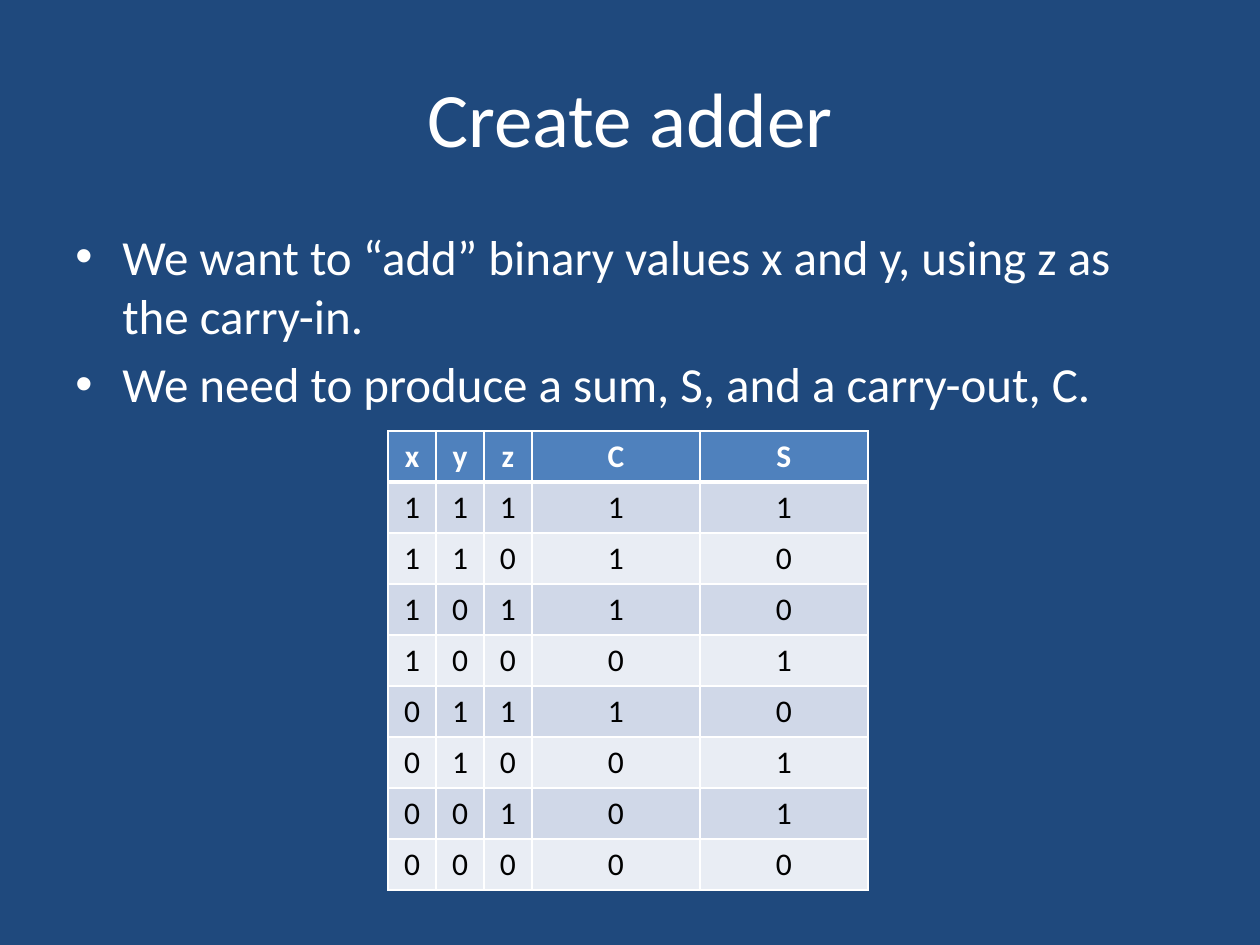
from itertools import product

from lxml.etree import SubElement
from pptx import Presentation
from pptx.dml.color import RGBColor
from pptx.enum.text import MSO_ANCHOR, PP_ALIGN
from pptx.oxml.ns import qn
from pptx.util import Emu, Pt

PX_PER_INCH = 126
COLORS = {
    "background": "1F497D",
    "light": "FFFFFF",
    "dark": "000000",
    "header": "4F81BD",
    "odd_row": "D0D8E8",
    "even_row": "E9EDF4",
}
TITLE = {"size": Pt(44), "name": "Calibri"}
BODY = {"size": Pt(28), "name": "Calibri"}
HEADER_CELL = {"size": Pt(18), "name": "Calibri", "bold": True}
VALUE_CELL = {"size": Pt(18), "name": "Calibri", "bold": False}

BULLETS = [
    "We want to “add” binary values x and y, using z as the carry-in.",
    "We need to produce a sum, S, and a carry-out, C.",
]
COLUMN_WIDTHS = {"x": 48, "y": 48, "z": 48, "C": 168, "S": 168}
ROW_HEIGHT = 51
BULLET_INDENT = 47


def px(length):
    return Emu(round(length * 914400 / PX_PER_INCH))


def color(name):
    return RGBColor.from_string(COLORS[name])


def write(paragraph, text, font_format, color_name, alignment):
    paragraph.alignment = alignment
    run = paragraph.add_run()
    run.text = text
    for attribute, value in font_format.items():
        setattr(run.font, attribute, value)
    run.font.color.rgb = color(color_name)


def add_text_frame(slide, left, top, width, height, anchor):
    text_box = slide.shapes.add_textbox(px(left), px(top), px(width), px(height))
    text_frame = text_box.text_frame
    text_frame.word_wrap = True
    text_frame.vertical_anchor = anchor
    return text_frame


def add_title(slide, text):
    text_frame = add_text_frame(slide, 63, 38, 1134, 157, MSO_ANCHOR.MIDDLE)
    write(text_frame.paragraphs[0], text, TITLE, "light", PP_ALIGN.CENTER)


def set_bullet(paragraph):
    properties = paragraph._p.get_or_add_pPr()
    properties.set("marL", str(px(BULLET_INDENT)))
    properties.set("indent", str(-px(BULLET_INDENT)))
    SubElement(properties, qn("a:buFont"), typeface="Arial")
    SubElement(properties, qn("a:buChar"), char="•")


def add_bullets(slide, texts):
    text_frame = add_text_frame(slide, 63, 220, 1134, 624, MSO_ANCHOR.TOP)
    for index, text in enumerate(texts):
        paragraph = text_frame.add_paragraph() if index else text_frame.paragraphs[0]
        paragraph.space_before = Pt(5.6)
        set_bullet(paragraph)
        write(paragraph, text, BODY, "light", PP_ALIGN.LEFT)


def set_borders(cell, widths):
    properties = cell._tc.get_or_add_tcPr()
    for side, width in widths.items():
        line = SubElement(properties, qn(f"a:ln{side}"), w=str(Pt(width)))
        fill = SubElement(line, qn("a:solidFill"))
        SubElement(fill, qn("a:srgbClr"), val=COLORS["light"])


def format_cell(cell, text, row_index):
    is_header = row_index == 0
    top = 3 if row_index == 1 else 1
    bottom = 3 if is_header else 1
    set_borders(cell, {"L": 1, "R": 1, "T": top, "B": bottom})
    fill_name = "header" if is_header else "odd_row" if row_index % 2 else "even_row"
    cell.fill.solid()
    cell.fill.fore_color.rgb = color(fill_name)
    font_format = HEADER_CELL if is_header else VALUE_CELL
    text_color = "light" if is_header else "dark"
    write(cell.text_frame.paragraphs[0], text, font_format, text_color, PP_ALIGN.CENTER)


def adder_rows():
    rows = [list(COLUMN_WIDTHS)]
    for inputs in product((1, 0), repeat=3):
        rows.append([*inputs, *divmod(sum(inputs), 2)])
    return rows


def add_truth_table(slide, rows):
    widths = list(COLUMN_WIDTHS.values())
    frame = slide.shapes.add_table(
        len(rows), len(widths), px(388), px(431), px(sum(widths)), px(ROW_HEIGHT * len(rows))
    )
    table = frame.table
    for column, width in zip(table.columns, widths):
        column.width = px(width)
    for row_index, values in enumerate(rows):
        table.rows[row_index].height = px(ROW_HEIGHT)
        for column_index, value in enumerate(values):
            format_cell(table.cell(row_index, column_index), str(value), row_index)


def main():
    presentation = Presentation()
    presentation.slide_width = px(1260)
    presentation.slide_height = px(945)
    slide = presentation.slides.add_slide(presentation.slide_layouts[6])
    slide.background.fill.solid()
    slide.background.fill.fore_color.rgb = color("background")
    add_title(slide, "Create adder")
    add_bullets(slide, BULLETS)
    add_truth_table(slide, adder_rows())
    presentation.save("out.pptx")


if __name__ == "__main__":
    main()
